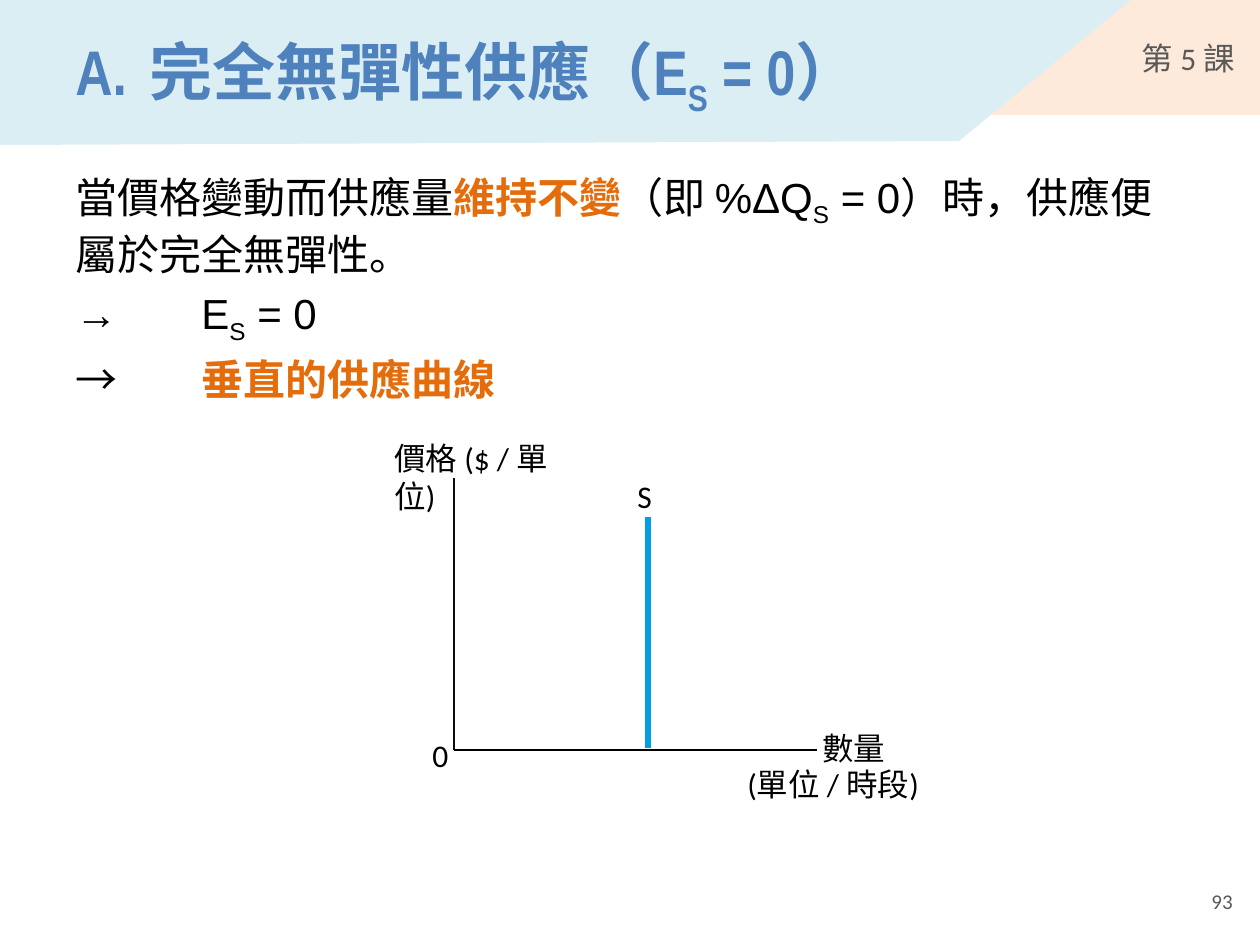
from dataclasses import dataclass

from lxml import etree
from pptx import Presentation
from pptx.dml.color import RGBColor
from pptx.enum import shapes, text
from pptx.oxml import ns
from pptx.util import Pt

PX = 914400 // 126  # EMU in one px
WIDTH, HEIGHT = 1260, 945


@dataclass(frozen=True)
class Theme:
    banner: str = "DBEEF4"
    tag: str = "FDEADA"
    heading: str = "4F81BD"
    muted: str = "595959"
    ink: str = "000000"
    axis: str = "0D0D0D"
    accent: str = "E46C0A"
    curve: str = "009FE3"
    title_size: int = 36
    body_size: int = 24
    label_size: int = 18
    number_size: int = 12
    title_font: str = "Arial Narrow"
    body_font: str = "Arial"
    label_font: str = "Calibri"


THEME = Theme()


def px(*lengths):
    return [round(length * PX) for length in lengths]


def paint(shape, color):
    shape.shadow.inherit = False
    shape.fill.solid()
    shape.fill.fore_color.rgb = RGBColor.from_string(color)
    shape.line.fill.background()


def set_font(paragraph, name, size, color, bold=False):
    font = paragraph.font
    font.name, font.size, font.bold = name, Pt(size), bold
    font.color.rgb = RGBColor.from_string(color)


def add_runs(paragraph, *parts):
    """Each part is (words, style); style is "", "sub" or "key"."""
    for words, style in parts:
        run = paragraph.add_run()
        run.text = words
        if style == "sub":
            run.font._element.set("baseline", "-25000")
        elif style == "key":
            run.font.bold = True
            run.font.color.rgb = RGBColor.from_string(THEME.accent)


def add_tab(paragraph, position):
    tabs = etree.SubElement(paragraph._p.get_or_add_pPr(), ns.qn("a:tabLst"))
    etree.SubElement(tabs, ns.qn("a:tab"), pos=str(px(position)[0]), algn="l")


def add_frame(slide, box, anchor=text.MSO_ANCHOR.TOP):
    frame = slide.shapes.add_textbox(*px(*box)).text_frame
    frame.word_wrap = True
    frame.vertical_anchor = anchor
    return frame


def add_label(slide, box, words):
    paragraph = add_frame(slide, box).paragraphs[0]
    set_font(paragraph, THEME.label_font, THEME.label_size, THEME.ink)
    add_runs(paragraph, (words, ""))


def add_line(slide, start, end, color, width):
    line = slide.shapes.add_connector(
        shapes.MSO_CONNECTOR.STRAIGHT, *px(*start, *end))
    line.line.color.rgb = RGBColor.from_string(color)
    line.line.width = Pt(width)
    etree.SubElement(line._element.spPr, ns.qn("a:effectLst"))


def lesson_tag(slide, box):
    shape = slide.shapes.add_shape(shapes.MSO_SHAPE.RECTANGLE, *px(*box))
    paint(shape, THEME.tag)
    frame = shape.text_frame
    frame.margin_right = px(25)[0]
    frame.vertical_anchor = text.MSO_ANCHOR.MIDDLE
    paragraph = frame.paragraphs[0]
    paragraph.alignment = text.PP_ALIGN.RIGHT
    set_font(paragraph, THEME.label_font, THEME.label_size, THEME.muted)
    add_runs(paragraph, ("第 5 課", ""))


def title_banner(slide, box):
    left, top, width, height = box
    # Slanted band
    builder = slide.shapes.build_freeform(left, top, scale=PX)
    builder.add_line_segments([
        (left + width, top), (left + width - 172, top + height - 4),
        (left, top + height)])
    paint(builder.convert_to_shape(), THEME.banner)
    # Heading, with a hanging indent after its letter
    frame = add_frame(slide, (left + 63, top + 26, 895, 100),
                      text.MSO_ANCHOR.MIDDLE)
    paragraph = frame.paragraphs[0]
    indent = px(74)[0]
    properties = paragraph._p.get_or_add_pPr()
    properties.set("marL", str(indent))
    properties.set("indent", str(-indent))
    set_font(paragraph, THEME.title_font, THEME.title_size, THEME.heading, True)
    add_runs(paragraph, ("A.\t完全無彈性供應（E", ""), ("S", "sub"),
             (" = 0）", ""))


def explanation(slide, box):
    rows = [
        [("當價格變動而供應量", ""), ("維持不變", "key"), ("（即 %ΔQ", ""),
         ("S", "sub"), (" = 0）時，供應便屬於完全無彈性。", "")],
        [("→\tE", ""), ("S", "sub"), (" = 0", "")],
        [("→\t", ""), ("垂直的供應曲線", "key")],
    ]
    frame = add_frame(slide, box)
    for index, parts in enumerate(rows):
        paragraph = frame.add_paragraph() if index else frame.paragraphs[0]
        if index:
            add_tab(paragraph, 126)
            paragraph.space_before = Pt(5)
        set_font(paragraph, THEME.body_font, THEME.body_size, THEME.ink)
        add_runs(paragraph, *parts)


def supply_graph(slide, box):
    left, top, width, height = box
    base, right = top + height, left + width
    supply = left + 194
    # Axes
    add_line(slide, (left, top), (left, base), THEME.axis, 1.5)
    add_line(slide, (left, base), (right, base), THEME.ink, 1.5)
    # Labels
    add_label(slide, (left - 34, base - 20, 73, 50), "0")
    add_label(slide, (right - 7, base - 27, 89, 50), "數量")
    add_label(slide, (left - 72, top - 45, 218, 50), "價格 ($ / 單位)")
    add_label(slide, (supply - 23, top - 7, 64, 50), "S")
    add_label(slide, (right - 82, base + 9, 270, 50), "(單位 / 時段)")
    # Supply curve
    add_line(slide, (supply, top + 39), (supply, base - 2), THEME.curve, 3)


def page_number(slide, box):
    paragraph = add_frame(slide, box, text.MSO_ANCHOR.MIDDLE).paragraphs[0]
    paragraph.alignment = text.PP_ALIGN.RIGHT
    set_font(paragraph, THEME.label_font, THEME.number_size, THEME.muted)
    add_runs(paragraph, ("93", ""))


def main():
    presentation = Presentation()
    presentation.slide_width, presentation.slide_height = px(WIDTH, HEIGHT)
    slide = presentation.slides.add_slide(presentation.slide_layouts[6])
    lesson_tag(slide, (927, 0, 333, 115))
    title_banner(slide, (0, 0, 1131, 145))
    explanation(slide, (63, 165, 1134, 237))
    supply_graph(slide, (454, 478, 363, 272))
    page_number(slide, (951, 876, 294, 50))
    presentation.save("out.pptx")


if __name__ == "__main__":
    main()
